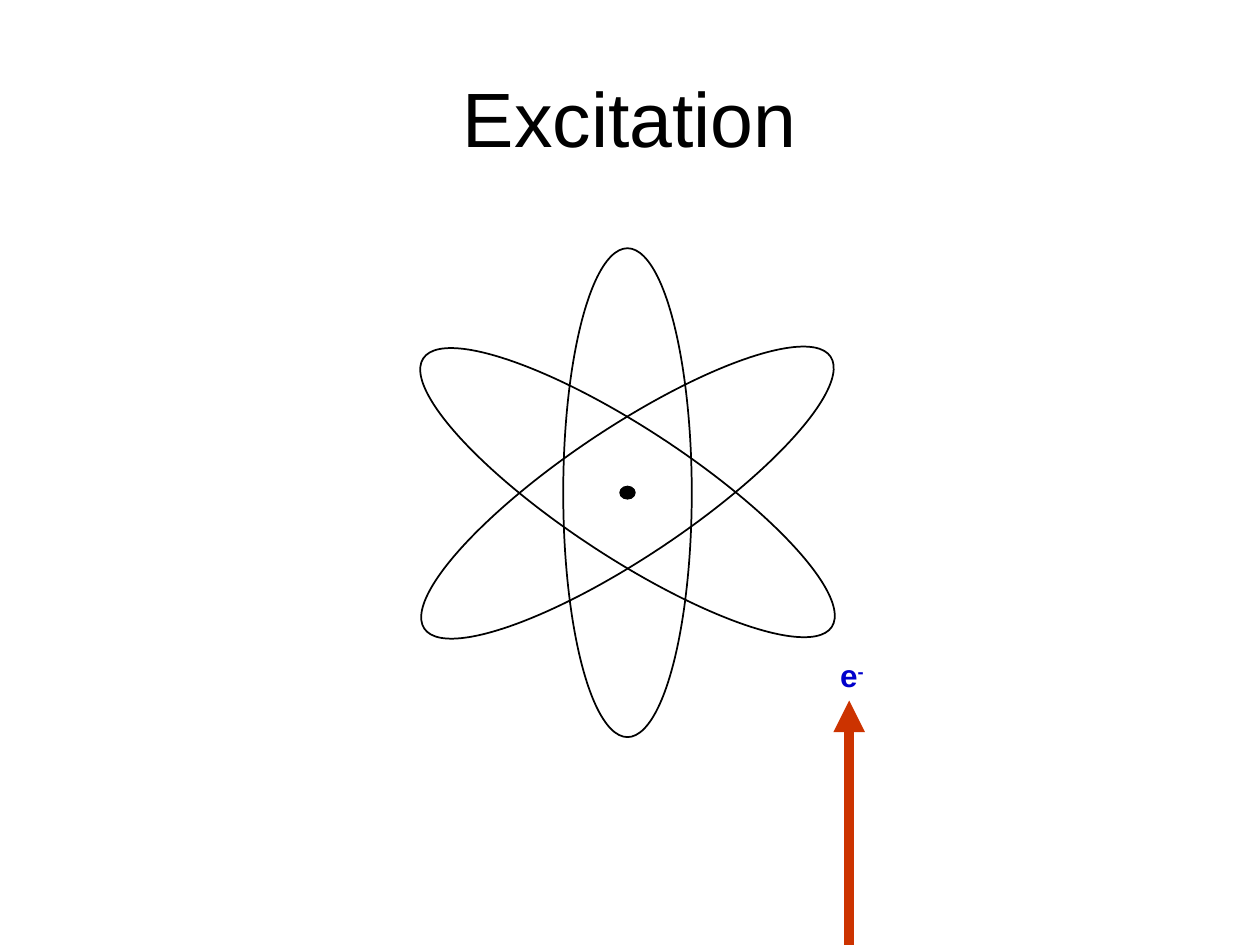
from dataclasses import dataclass

from lxml.etree import SubElement
from pptx import Presentation
from pptx.dml.color import RGBColor
from pptx.enum.shapes import MSO_CONNECTOR, MSO_SHAPE
from pptx.enum.text import MSO_ANCHOR, MSO_AUTO_SIZE, PP_ALIGN
from pptx.oxml.ns import qn
from pptx.slide import Slide
from pptx.util import Inches, Pt


@dataclass(frozen=True)
class Theme:
    font: str = "Arial"
    ink: RGBColor = RGBColor(0x00, 0x00, 0x00)
    electron: RGBColor = RGBColor(0x00, 0x00, 0xCC)
    beam: RGBColor = RGBColor(0xCC, 0x33, 0x00)
    title_size: Pt = Pt(44)
    label_size: Pt = Pt(18)
    orbit_line: Pt = Pt(1)
    nucleus_line: Pt = Pt(0.75)
    beam_line: Pt = Pt(6)


@dataclass(frozen=True)
class Ellipse:
    width: float
    height: float
    rotation: float
    line_width: Pt
    filled: bool = False


THEME = Theme()
CENTER_X, CENTER_Y = 4.98, 3.91
ORBIT_WIDTH, ORBIT_HEIGHT = 3.88, 1.02
VERTICAL = 270
ATOM = [
    Ellipse(ORBIT_WIDTH, ORBIT_HEIGHT, VERTICAL, THEME.orbit_line),
    Ellipse(0.1, 0.12, VERTICAL, THEME.nucleus_line, filled=True),
    Ellipse(ORBIT_WIDTH, ORBIT_HEIGHT, 213.3, THEME.orbit_line),
    Ellipse(ORBIT_WIDTH, ORBIT_HEIGHT, 326.2, THEME.orbit_line),
]


def add_title(slide: Slide, wording: str) -> None:
    title = slide.shapes.title
    title.left, title.top = Inches(0.5), Inches(0.3)
    title.width, title.height = Inches(9), Inches(1.25)
    frame = title.text_frame
    frame.text = wording
    frame.vertical_anchor = MSO_ANCHOR.MIDDLE
    heading = frame.paragraphs[0]
    heading.alignment = PP_ALIGN.CENTER
    heading.font.name = THEME.font
    heading.font.size = THEME.title_size
    heading.font.color.rgb = THEME.ink


def add_ellipse(slide: Slide, ellipse: Ellipse) -> None:
    outline = slide.shapes.add_shape(
        MSO_SHAPE.OVAL,
        Inches(CENTER_X - ellipse.width / 2),
        Inches(CENTER_Y - ellipse.height / 2),
        Inches(ellipse.width),
        Inches(ellipse.height),
    )
    outline.rotation = ellipse.rotation
    outline.shadow.inherit = False
    outline.line.color.rgb = THEME.ink
    outline.line.width = ellipse.line_width
    if ellipse.filled:
        outline.fill.solid()
        outline.fill.fore_color.rgb = THEME.ink
    else:
        outline.fill.background()


def add_incoming_electron(slide: Slide) -> None:
    electron = slide.shapes.add_group_shape()
    label = electron.shapes.add_textbox(Inches(6.57), Inches(5.16), Inches(0.4), Inches(0.4))
    label.text_frame.word_wrap = False
    label.text_frame.auto_size = MSO_AUTO_SIZE.SHAPE_TO_FIT_TEXT
    symbol = label.text_frame.paragraphs[0]
    symbol.font.name = THEME.font
    symbol.font.size = THEME.label_size
    symbol.font.bold = True
    symbol.font.color.rgb = THEME.electron
    symbol.add_run().text = "e"
    charge = symbol.add_run()
    charge.text = "-"
    charge._r.get_or_add_rPr().set("baseline", "30000")

    beam = electron.shapes.add_connector(
        MSO_CONNECTOR.STRAIGHT, Inches(6.74), Inches(7.5), Inches(6.74), Inches(5.56)
    )
    beam.line.color.rgb = THEME.beam
    beam.line.width = THEME.beam_line
    SubElement(beam.line._get_or_add_ln(), qn("a:tailEnd"), type="triangle")
    SubElement(beam._element.spPr, qn("a:effectLst"))


def main() -> None:
    presentation = Presentation()
    presentation.slide_width, presentation.slide_height = Inches(10), Inches(7.5)
    slide = presentation.slides.add_slide(presentation.slide_layouts[5])
    add_title(slide, "Excitation")
    for ellipse in ATOM:
        add_ellipse(slide, ellipse)
    add_incoming_electron(slide)
    presentation.save("out.pptx")


if __name__ == "__main__":
    main()
